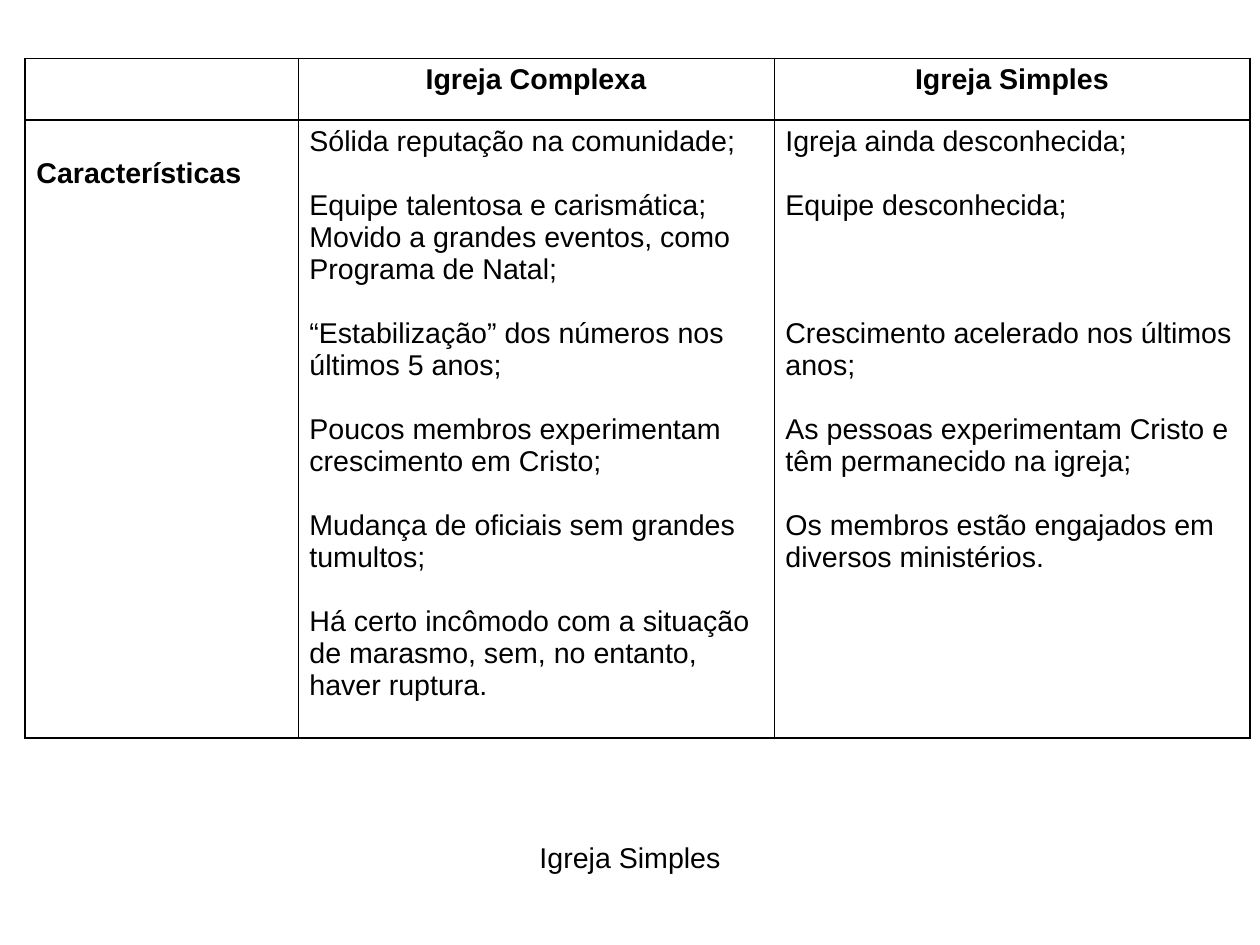
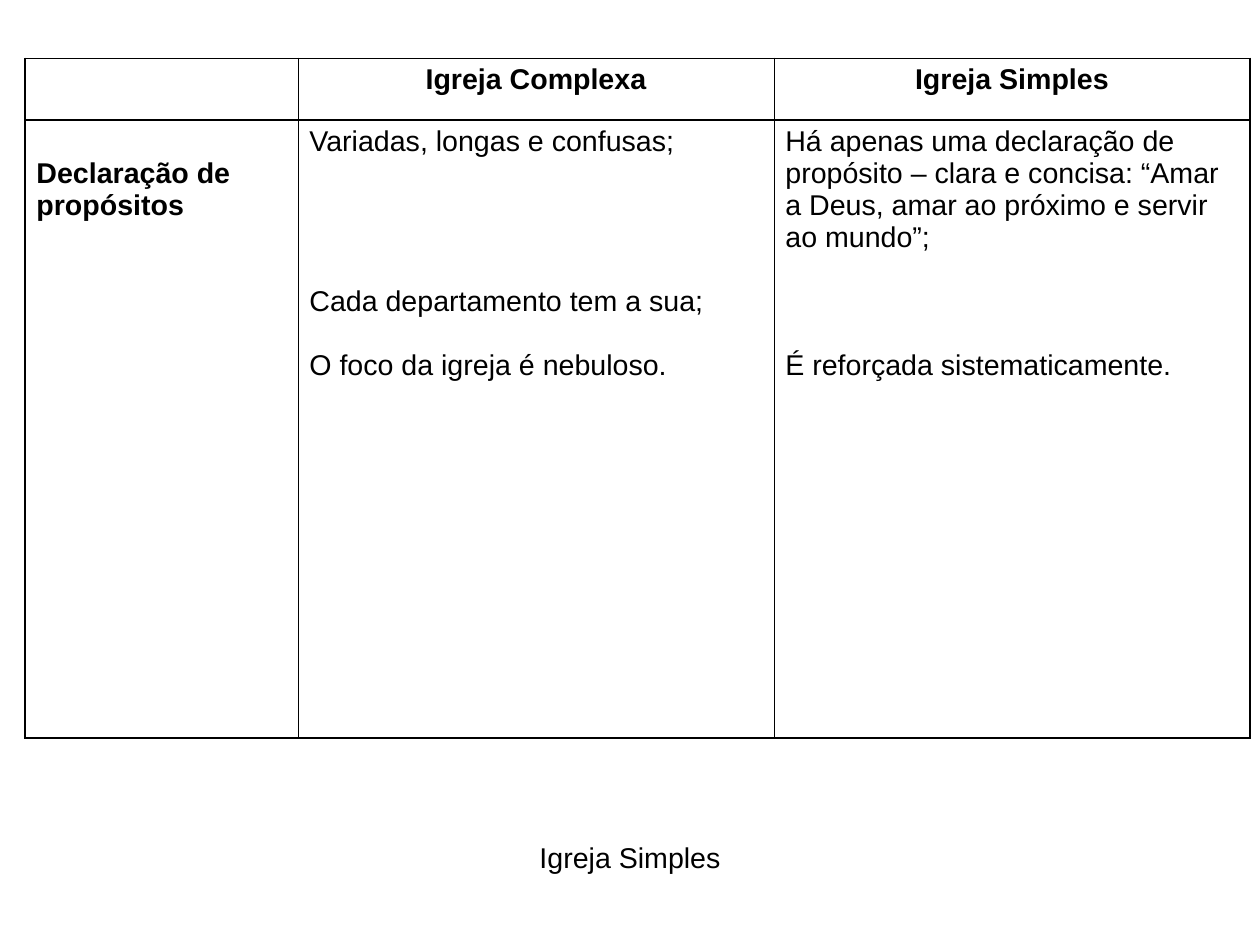
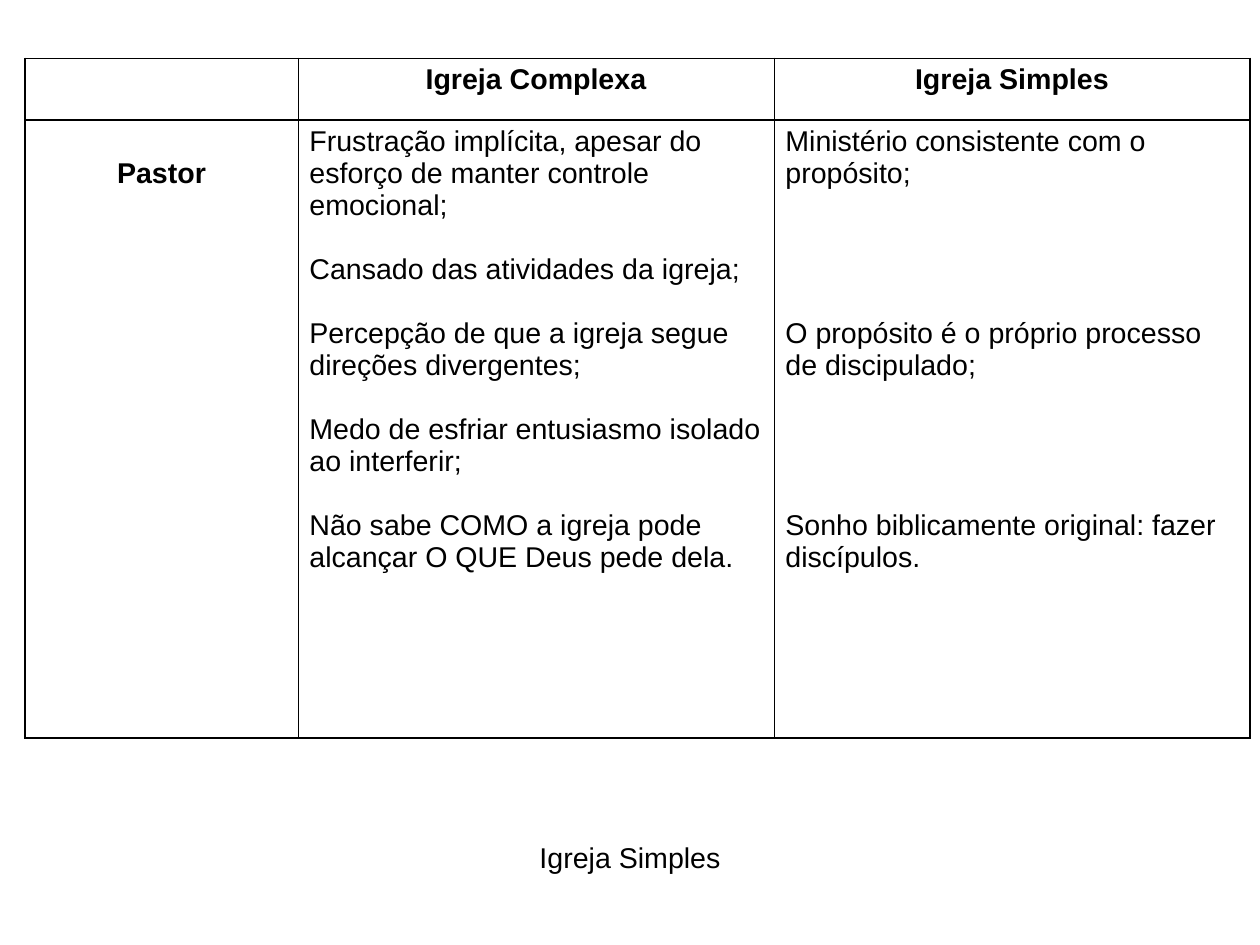
from dataclasses import dataclass

import pptx
import pptx.dml.color
import pptx.enum.text
import pptx.oxml
import pptx.oxml.ns
import pptx.slide
import pptx.table
import pptx.text.text
import pptx.util

EMU_PER_PX = 8000
ALIGN = pptx.enum.text.PP_ALIGN


def px(n: int) -> pptx.util.Emu:
    return pptx.util.Emu(n * EMU_PER_PX)


@dataclass(frozen=True)
class Theme:
    font: str = "Arial"
    size: int = 18
    ink: str = "000000"
    paper: str = "FFFFFF"
    thin: float = 0.5
    thick: float = 1.0
    line: int = 32
    cell_top: int = 6


@dataclass(frozen=True)
class Box:
    left: int
    top: int
    width: int
    height: int


@dataclass(frozen=True)
class Item:
    """A paragraph and the number of text lines left free above it."""
    text: str
    gap: int = 1


@dataclass(frozen=True)
class Comparison:
    topic: str
    complex_church: tuple[Item, ...]
    simple_church: tuple[Item, ...]
    topic_align: ALIGN = ALIGN.LEFT


THEME = Theme()
SLIDE_W, SLIDE_H = 1260, 945
TITLE = "Igreja Simples"
TITLE_BOX = Box(63, 778, 1134, 158)
COLUMNS = (273, 476, 476)
ROWS = (62, 618)
TABLE_BOX = Box(25, 58, sum(COLUMNS), sum(ROWS))
HEADINGS = ("", "Igreja Complexa", "Igreja Simples")

COMPARISONS = (
    Comparison(
        "Características",
        (
            Item("Sólida reputação na comunidade;", 0),
            Item("Equipe talentosa e carismática;"),
            Item("Movido a grandes eventos, como Programa de Natal;", 0),
            Item("“Estabilização” dos números nos últimos 5 anos;"),
            Item("Poucos membros experimentam crescimento em Cristo;"),
            Item("Mudança de oficiais sem grandes tumultos;"),
            Item("Há certo incômodo com a situação de marasmo, sem, no entanto, "
                 "haver ruptura."),
        ),
        (
            Item("Igreja ainda desconhecida;", 0),
            Item("Equipe desconhecida;"),
            Item("Crescimento acelerado nos últimos anos;", 3),
            Item("As pessoas experimentam Cristo e têm permanecido na igreja;"),
            Item("Os membros estão engajados em diversos ministérios."),
        ),
    ),
    Comparison(
        "Declaração de propósitos",
        (
            Item("Variadas, longas e confusas;", 0),
            Item("Cada departamento tem a sua;", 4),
            Item("O foco da igreja é nebuloso."),
        ),
        (
            Item("Há apenas uma declaração de propósito – clara e concisa: “Amar a "
                 "Deus, amar ao próximo e servir ao mundo”;", 0),
            Item("É reforçada sistematicamente.", 3),
        ),
    ),
    Comparison(
        "Pastor",
        (
            Item("Frustração implícita, apesar do esforço de manter controle "
                 "emocional;", 0),
            Item("Cansado das atividades da igreja;"),
            Item("Percepção de que a igreja segue direções divergentes;"),
            Item("Medo de esfriar entusiasmo isolado ao interferir;"),
            Item("Não sabe COMO a igreja pode alcançar O QUE Deus pede dela."),
        ),
        (
            Item("Ministério consistente com o propósito;", 0),
            Item("O propósito é o próprio processo de discipulado;", 4),
            Item("Sonho biblicamente original: fazer discípulos.", 4),
        ),
        ALIGN.CENTER,
    ),
)


def write(tf: pptx.text.text.TextFrame, items: tuple[Item, ...],
          align: ALIGN = ALIGN.LEFT, bold: bool = False) -> None:
    for i, item in enumerate(items):
        p = tf.add_paragraph() if i else tf.paragraphs[0]
        p.text = item.text
        p.alignment = align
        if i:
            p.space_before = px(item.gap * THEME.line)
        p.font.name = THEME.font
        p.font.size = pptx.util.Pt(THEME.size)
        p.font.bold = bold
        p.font.color.rgb = pptx.dml.color.RGBColor.from_string(THEME.ink)


def add_border(cell: pptx.table._Cell, side: str, width: float) -> None:
    ns = pptx.oxml.ns.nsdecls("a")
    cell._tc.get_or_add_tcPr().append(pptx.oxml.parse_xml(
        f'<a:ln{side} {ns} w="{pptx.util.Pt(width)}"><a:solidFill>'
        f'<a:srgbClr val="{THEME.ink}"/></a:solidFill></a:ln{side}>'))


def style_cell(cell: pptx.table._Cell, row: int, col: int) -> None:
    """Thin top and inner verticals; thick sides and row bottoms."""
    widths = {
        "L": THEME.thin if col else THEME.thick,
        "R": THEME.thick if col == len(COLUMNS) - 1 else THEME.thin,
        "T": THEME.thick if row else THEME.thin,
        "B": THEME.thick,
    }
    for side, width in widths.items():
        add_border(cell, side, width)
    cell.fill.solid()
    cell.fill.fore_color.rgb = pptx.dml.color.RGBColor.from_string(THEME.paper)


def add_title(s: pptx.slide.Slide) -> None:
    sp = s.shapes.title
    sp.left, sp.top = px(TITLE_BOX.left), px(TITLE_BOX.top)
    sp.width, sp.height = px(TITLE_BOX.width), px(TITLE_BOX.height)
    tf = sp.text_frame
    tf.margin_left = tf.margin_top = tf.margin_right = tf.margin_bottom = 0
    tf.vertical_anchor = pptx.enum.text.MSO_ANCHOR.MIDDLE
    tf.auto_size = pptx.enum.text.MSO_AUTO_SIZE.NONE
    tf.word_wrap = True
    write(tf, (Item(TITLE, 0),), ALIGN.CENTER)


def add_comparison(s: pptx.slide.Slide, comparison: Comparison) -> None:
    table = s.shapes.add_table(
        len(ROWS), len(COLUMNS), px(TABLE_BOX.left), px(TABLE_BOX.top),
        px(TABLE_BOX.width), px(TABLE_BOX.height)).table
    table.horz_banding = False
    for column, width in zip(table.columns, COLUMNS):
        column.width = px(width)
    for row, height in zip(table.rows, ROWS):
        row.height = px(height)
    for r in range(len(ROWS)):
        for c in range(len(COLUMNS)):
            style_cell(table.cell(r, c), r, c)

    for c, heading in enumerate(HEADINGS):
        write(table.cell(0, c).text_frame, (Item(heading, 0),), ALIGN.CENTER, True)
    topic = table.cell(1, 0)
    topic.margin_top = px(THEME.cell_top + THEME.line)
    write(topic.text_frame, (Item(comparison.topic, 0),), comparison.topic_align, True)
    write(table.cell(1, 1).text_frame, comparison.complex_church)
    write(table.cell(1, 2).text_frame, comparison.simple_church)


def main() -> None:
    prs = pptx.Presentation()
    prs.slide_width, prs.slide_height = px(SLIDE_W), px(SLIDE_H)
    title_only = prs.slide_layouts.get_by_name("Title Only")
    for comparison in COMPARISONS:
        s = prs.slides.add_slide(title_only)
        add_title(s)
        add_comparison(s, comparison)
    prs.save("out.pptx")


if __name__ == "__main__":
    main()
